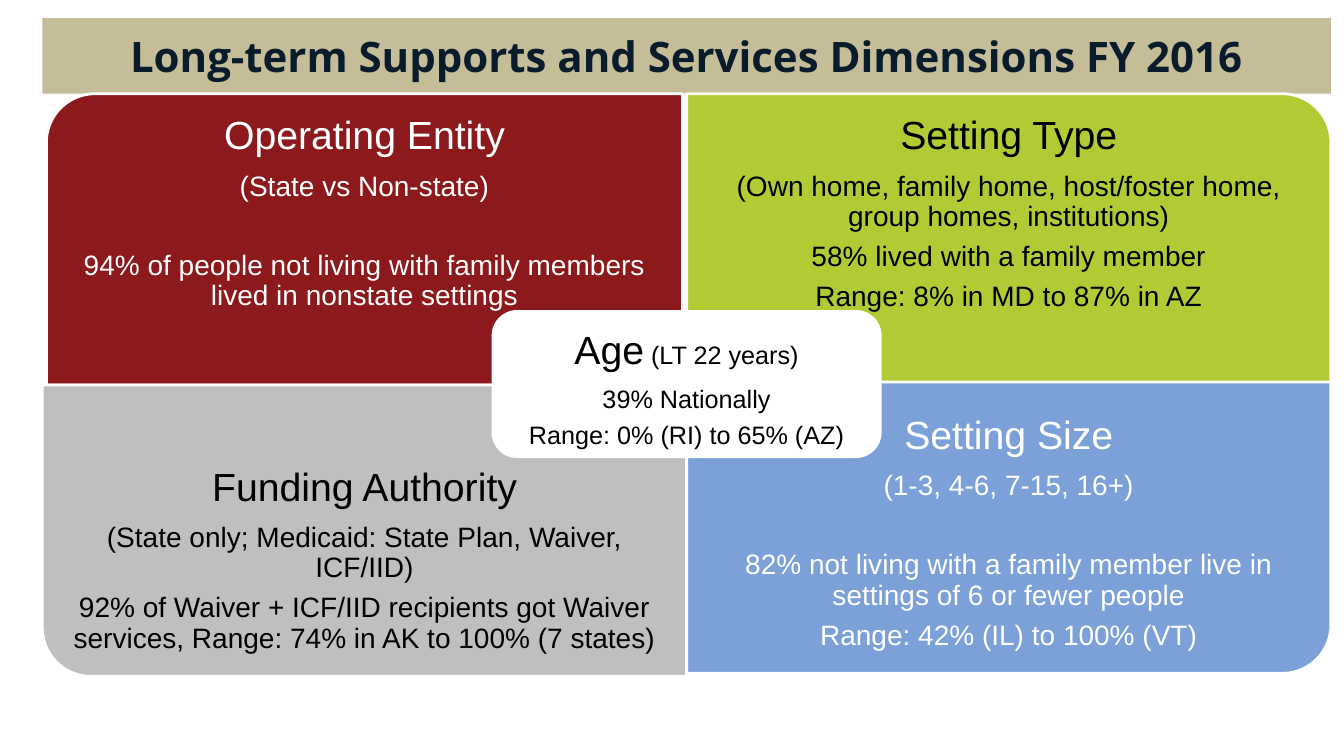
from pptx import Presentation
from pptx.dml.color import RGBColor
from pptx.enum.shapes import MSO_SHAPE as Shape
from pptx.enum.text import MSO_ANCHOR as Anchor, PP_ALIGN as Align
from pptx.util import Inches, Pt

WIDTH, HEIGHT = 13.33, 7.5
LEFT, TOP = 0.42, 0.93
COLUMN, ROW = 6.39, 2.89
MIDDLE = LEFT + COLUMN
TEXT_SHARE = 0.75
HEADING, BODY, SMALL = 28, 20, 18
BLANK_LINE = 28
WHITE, BLACK = "FFFFFF", "000000"


def color(hex_string):
    return RGBColor.from_string(hex_string)


def format_run(run, text, size, hex_color, font="Arial", bold=False):
    run.text = text
    run.font.name = font
    run.font.size = Pt(size)
    run.font.bold = bold
    run.font.color.rgb = color(hex_color)


def add_panel(slide, preset, box, fill, rotation=0):
    """Filled panel that covers the box once it has been rotated."""
    left, top, width, height = box
    if rotation in (90, 270):
        left += (width - height) / 2
        top += (height - width) / 2
        width, height = height, width
    panel = slide.shapes.add_shape(
        preset, Inches(left), Inches(top), Inches(width), Inches(height))
    panel.rotation = rotation
    panel.shadow.inherit = False
    panel.fill.solid()
    panel.fill.fore_color.rgb = color(fill)
    panel.line.color.rgb = color(WHITE)
    panel.line.width = Pt(2)


def add_text(slide, box, lines, hex_color, anchor=Anchor.TOP, inset=0.22):
    """Centred paragraphs; each line is (runs, extra space before)."""
    text_box = slide.shapes.add_textbox(*(Inches(length) for length in box))
    frame = text_box.text_frame
    frame.word_wrap = True
    frame.vertical_anchor = anchor
    frame.margin_left = frame.margin_right = Inches(inset)
    frame.margin_top = frame.margin_bottom = Inches(inset)
    previous_size = 0
    for index, (runs, extra) in enumerate(lines):
        paragraph = frame.add_paragraph() if index else frame.paragraphs[0]
        paragraph.alignment = Align.CENTER
        paragraph.line_spacing = 0.9
        if index:
            paragraph.space_before = Pt(round(0.35 * previous_size + extra, 1))
        for text, size in runs:
            format_run(paragraph.add_run(), text, size, hex_color)
        previous_size = max(size for text, size in runs)


def add_title(slide, text):
    title = slide.shapes.title
    title.left, title.top = Inches(LEFT), Inches(0.18)
    title.width, title.height = Inches(2 * COLUMN), Inches(0.75)
    title.fill.solid()
    title.fill.fore_color.rgb = color("C4BD97")
    frame = title.text_frame
    frame.word_wrap = True
    frame.vertical_anchor = Anchor.MIDDLE
    paragraph = frame.paragraphs[0]
    paragraph.alignment = Align.CENTER
    format_run(paragraph.add_run(), text, 30, "081C2C", font="Open Sans", bold=True)


def add_quadrant(slide, box, rotation, fill, hex_color, heading, details, gap_after_first):
    left, top, width, height = box
    add_panel(slide, Shape.ROUND_1_RECTANGLE, box, fill, rotation)
    lines = [([(heading, HEADING)], 0)]
    for index, detail in enumerate(details):
        extra = BLANK_LINE if gap_after_first and index == 1 else 0
        lines.append(([(detail, BODY)], extra))
    # Upper quadrants fill from the top, lower ones from the bottom
    lower = rotation in (90, 180)
    text_top = top + height * (1 - TEXT_SHARE) if lower else top
    add_text(slide, (left, text_top, width, height * TEXT_SHARE), lines, hex_color,
             anchor=Anchor.BOTTOM if lower else Anchor.TOP)


def add_age_card(slide, box):
    left, top, width, height = box
    add_panel(slide, Shape.ROUNDED_RECTANGLE, box, WHITE)
    margin = 0.07
    lines = [([("Age", HEADING), (" (LT 22 years)", SMALL)], 0),
             ([("39% Nationally", SMALL)], 0),
             ([("Range: 0% (RI) to 65% (AZ)", SMALL)], 0)]
    inner = (left + margin, top + margin, width - 2 * margin, height - 2 * margin)
    add_text(slide, inner, lines, BLACK, inset=0.12)


# Box, rotation, fill, text colour, heading, details, blank line after first detail
QUADRANTS = [
    ((LEFT + 0.04, TOP, COLUMN - 0.08, ROW), 270, "8C191C", WHITE, "Operating Entity",
     ["(State vs Non-state)",
      "94% of people not living with family members lived in nonstate settings"], True),
    ((MIDDLE, TOP, COLUMN, ROW), 0, "B2CB35", BLACK, "Setting Type",
     ["(Own home, family home, host/foster home, group homes, institutions)",
      "58% lived with a family member",
      "Range: 8% in MD to 87% in AZ"], False),
    ((LEFT, TOP + ROW, COLUMN, ROW), 180, "BFBFBF", BLACK, "Funding Authority",
     ["(State only; Medicaid: State Plan, Waiver, ICF/IID)",
      "92% of Waiver + ICF/IID recipients got Waiver services, "
      "Range: 74% in AK to 100% (7 states)"], False),
    ((MIDDLE, TOP + ROW - 0.03, COLUMN, ROW), 90, "7BA1D8", WHITE, "Setting Size",
     ["(1-3, 4-6, 7-15, 16+)",
      "82% not living with a family member live in settings of 6 or fewer people",
      "Range: 42% (IL) to 100% (VT)"], True),
]


def main():
    presentation = Presentation()
    presentation.slide_width, presentation.slide_height = Inches(WIDTH), Inches(HEIGHT)
    slide = presentation.slides.add_slide(presentation.slide_layouts[5])
    add_title(slide, "Long-term Supports and Services Dimensions FY 2016")
    for quadrant in QUADRANTS:
        add_quadrant(slide, *quadrant)
    # Age card sits over the meeting point of the quadrants
    card_width, card_height = 3.84, 1.44
    add_age_card(slide, (MIDDLE - card_width / 2, TOP + ROW - card_height / 2 - 0.01,
                         card_width, card_height))
    presentation.save("out.pptx")


if __name__ == "__main__":
    main()
